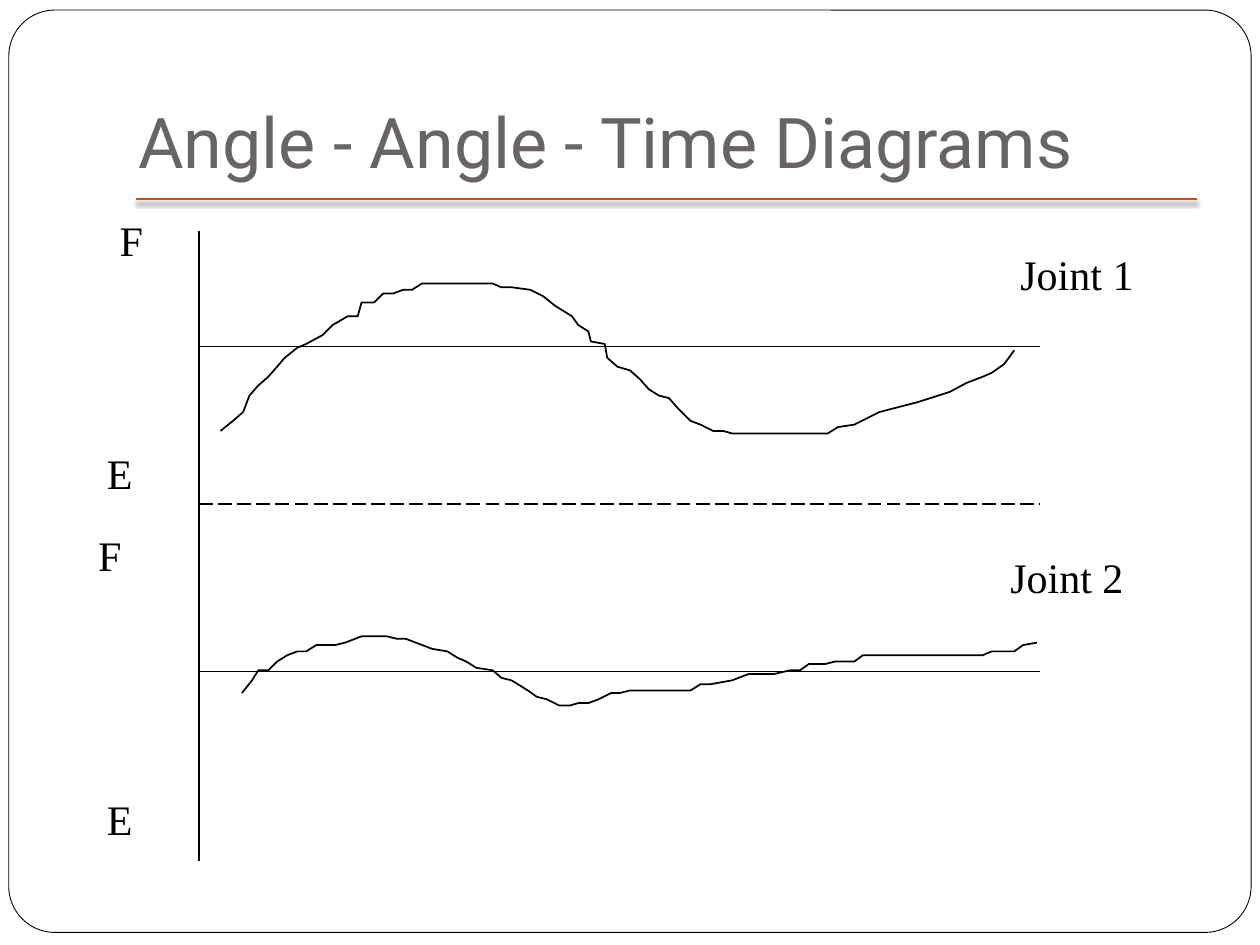
import pptx
import pptx.util
import pptx.dml.color
import pptx.enum.dml
import pptx.enum.shapes
import pptx.enum.text
import lxml.etree
from pptx.util import Inches

BLACK = "000000"
DRAWING_NS = "http://schemas.openxmlformats.org/drawingml/2006/main"

JOINT_1_CURVE = [
    (0, 1.17), (0.1, 1.09), (0.18, 1.02), (0.23, 0.89), (0.3, 0.81), (0.38, 0.74),
    (0.45, 0.66), (0.51, 0.59), (0.61, 0.51), (0.68, 0.48), (0.81, 0.41), (0.89, 0.33),
    (1.01, 0.26), (1.09, 0.26), (1.12, 0.15), (1.22, 0.15), (1.29, 0.08), (1.37, 0.08),
    (1.45, 0.05), (1.52, 0.05), (1.6, 0), (2.16, 0), (2.23, 0.03), (2.31, 0.03),
    (2.46, 0.05), (2.56, 0.1), (2.66, 0.18), (2.79, 0.26), (2.84, 0.33), (2.92, 0.38),
    (2.94, 0.46), (3.05, 0.48), (3.07, 0.59), (3.15, 0.66), (3.25, 0.69), (3.33, 0.76),
    (3.4, 0.84), (3.48, 0.89), (3.56, 0.91), (3.63, 0.99), (3.73, 1.09), (3.81, 1.12),
    (3.91, 1.17), (3.99, 1.17), (4.06, 1.19), (4.82, 1.19), (4.9, 1.14), (5.03, 1.12),
    (5.23, 1.02), (5.54, 0.94), (5.79, 0.86), (5.92, 0.79), (6.05, 0.74), (6.12, 0.71),
    (6.22, 0.64), (6.3, 0.53),
]
JOINT_2_CURVE = [
    (0, 0.45), (0.08, 0.35), (0.13, 0.27), (0.21, 0.27), (0.28, 0.2), (0.36, 0.15),
    (0.44, 0.12), (0.51, 0.12), (0.59, 0.07), (0.74, 0.07), (0.82, 0.05), (0.95, 0),
    (1.15, 0), (1.23, 0.02), (1.3, 0.02), (1.38, 0.05), (1.51, 0.1), (1.63, 0.12),
    (1.71, 0.17), (1.78, 0.2), (1.86, 0.25), (1.99, 0.27), (2.06, 0.33), (2.14, 0.35),
    (2.27, 0.43), (2.34, 0.48), (2.42, 0.5), (2.52, 0.55), (2.6, 0.55), (2.67, 0.53),
    (2.75, 0.53), (2.83, 0.5), (2.93, 0.45), (3, 0.45), (3.08, 0.43), (3.56, 0.43),
    (3.64, 0.38), (3.72, 0.38), (3.89, 0.35), (4.02, 0.3), (4.22, 0.3), (4.35, 0.27),
    (4.43, 0.27), (4.5, 0.22), (4.63, 0.22), (4.71, 0.2), (4.86, 0.2), (4.93, 0.15),
    (5.88, 0.15), (5.95, 0.12), (6.13, 0.12), (6.2, 0.07), (6.31, 0.05),
]


def rgb(value):
    """Turn a hex string into a colour."""
    return pptx.dml.color.RGBColor.from_string(value)


def set_line(shape, colour=BLACK, width=1):
    """Set the colour and point width of an outline."""
    shape.line.color.rgb = rgb(colour)
    shape.line.width = pptx.util.Pt(width)


def add_line(slide, x1, y1, x2, y2, colour=BLACK):
    """Draw a straight line and return it with its empty effect list."""
    line = slide.shapes.add_connector(
        pptx.enum.shapes.MSO_CONNECTOR.STRAIGHT,
        Inches(x1), Inches(y1), Inches(x2), Inches(y2))
    set_line(line, colour)
    effects = lxml.etree.SubElement(line._element.spPr, f"{{{DRAWING_NS}}}effectLst")
    return line, effects


def add_text(slide, left, top, width, height, text, size=24,
             font="Times New Roman", colour=BLACK):
    """Place one line of text and return its frame."""
    frame = slide.shapes.add_textbox(
        Inches(left), Inches(top), Inches(width), Inches(height)).text_frame
    frame.word_wrap = True
    paragraph = frame.paragraphs[0]
    paragraph.text = text
    paragraph.font.size = pptx.util.Pt(size)
    paragraph.font.name = font
    paragraph.font.color.rgb = rgb(colour)
    return frame


def add_frame(slide, left, top, width, height):
    """Draw the rounded border around the slide."""
    border = slide.shapes.add_shape(
        pptx.enum.shapes.MSO_SHAPE.ROUNDED_RECTANGLE,
        Inches(left), Inches(top), Inches(width), Inches(height))
    border.adjustments[0] = 0.05
    border.shadow.inherit = False
    border.fill.solid()
    border.fill.fore_color.rgb = rgb("FFFFFF")
    set_line(border, width=0.5)


def add_title(slide, left, top, width, height):
    """Place the title and the shadowed rule below it."""
    frame = add_text(slide, left, top, width, height, "Angle - Angle - Time Diagrams",
                     size=40, font="Roboto", colour="696464")
    frame.vertical_anchor = pptx.enum.text.MSO_ANCHOR.BOTTOM
    frame.margin_bottom = Inches(0.1)
    rule_y = top + height + 0.03
    _, effects = add_line(slide, left + 0.08, rule_y, left + width, rule_y, "D34817")
    effects.append(pptx.oxml.parse_xml(
        f'<a:outerShdw xmlns:a="{DRAWING_NS}" blurRad="38100" dist="25400" '
        'dir="5400000" algn="t" rotWithShape="0"><a:srgbClr val="000000">'
        '<a:alpha val="50000"/></a:srgbClr></a:outerShdw>'))


def add_curve(slide, left, top, points):
    """Draw an open curve through points measured from its top left corner."""
    vertices = [(Inches(left + x), Inches(top + y)) for x, y in points]
    builder = slide.shapes.build_freeform(*vertices[0])
    builder.add_line_segments(vertices[1:], close=False)
    curve = builder.convert_to_shape()
    curve.shadow.inherit = False
    curve.fill.background()
    set_line(curve)


def add_joint_plot(slide, left, top, width, zero, curve_at, curve, name, name_at,
                   flexion_at, extension_at):
    """Draw one joint's zero line, angle curve and labels from the plot's corner."""
    add_line(slide, left, top + zero, left + width, top + zero)
    add_curve(slide, left + curve_at[0], top + curve_at[1], curve)
    for text, (x, y), label_width in (
            (name, name_at, 1.6), ("F", flexion_at, 0.39), ("E", extension_at, 0.59)):
        add_text(slide, left + x, top + y, label_width, 0.5, text)


def add_diagram(slide, left, top, width, height):
    """Stack the two joint plots on a shared axis with a dashed divider."""
    add_line(slide, left, top, left, top + height)
    divider_y = top + 2.17
    divider, _ = add_line(slide, left, divider_y, left + width, divider_y)
    divider.line.dash_style = pptx.enum.dml.MSO_LINE.LONG_DASH
    add_joint_plot(slide, left, top, width, 0.92, (0.17, 0.42), JOINT_1_CURVE,
                   "Joint 1", (6.42, 0.09), (-0.73, -0.18), (-0.83, 1.67))
    add_joint_plot(slide, left, divider_y, width, 1.33, (0.34, 1.05), JOINT_2_CURVE,
                   "Joint 2", (6.34, 0.33), (-0.9, 0.15), (-0.83, 2.25))


def main():
    """Build and save the slide."""
    deck = pptx.Presentation()
    deck.slide_width, deck.slide_height = Inches(10), Inches(7.5)
    slide = deck.slides.add_slide(deck.slide_layouts[6])
    add_frame(slide, 0.07, 0.08, 9.86, 7.32)
    add_title(slide, 1, 0.3, 8.5, 1.25)
    add_diagram(slide, 1.58, 1.83, 6.67, 5)
    deck.save("out.pptx")


if __name__ == "__main__":
    main()
